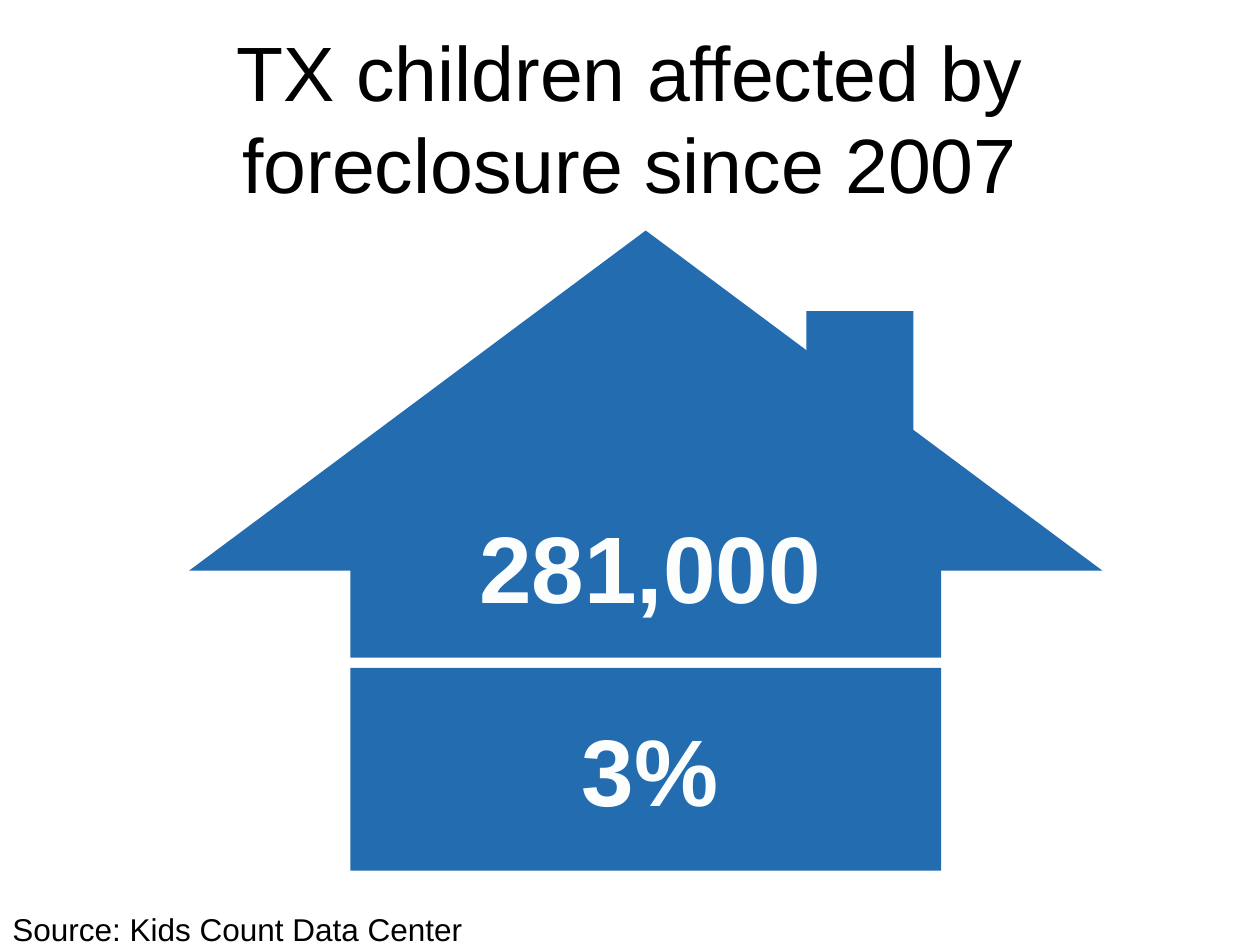
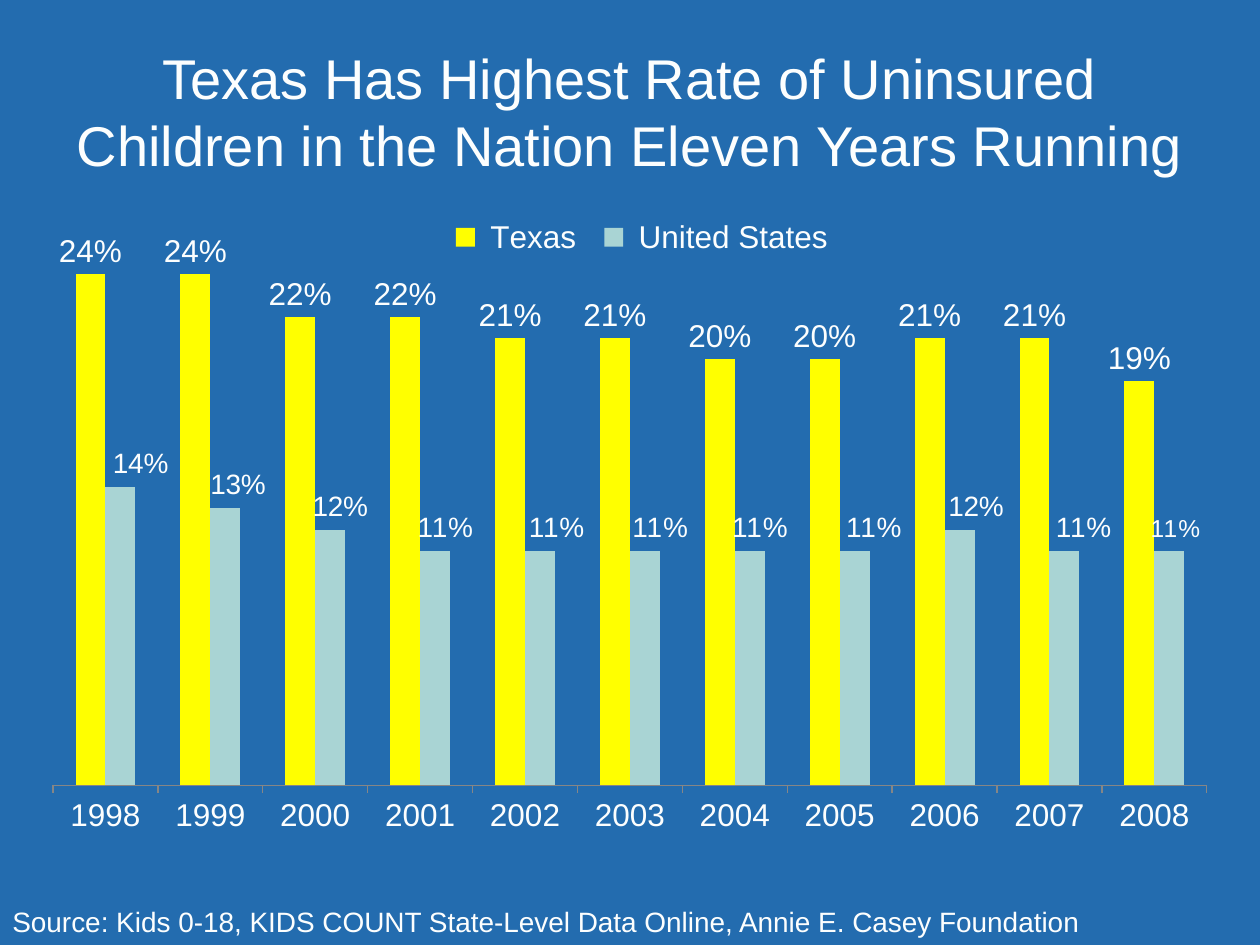
from lxml.etree import SubElement
from pptx import Presentation
from pptx.chart.data import CategoryChartData as ChartData
from pptx.dml.color import RGBColor
from pptx.enum.chart import XL_CHART_TYPE as Kind, XL_LABEL_POSITION as Spot
from pptx.enum.chart import XL_LEGEND_POSITION as Side, XL_TICK_MARK as Tick
from pptx.enum.shapes import MSO_SHAPE as Form
from pptx.enum.text import MSO_ANCHOR as Anchor, MSO_AUTO_SIZE as Fit, PP_ALIGN as Align
from pptx.oxml.ns import qn
from pptx.util import Inches, Pt

FACE = "Arial"
BLUE, WHITE, BLACK = "236CAF", "FCFEFE", "000000"
YELLOW, TEAL, GREY = "FFFF00", "A9D4D4", "868686"

YEARS = [str(year) for year in range(1998, 2009)]
TEXAS = [0.24, 0.24, 0.22, 0.22, 0.21, 0.21, 0.20, 0.20, 0.21, 0.21, 0.19]
NATION = [0.14, 0.13, 0.12, 0.11, 0.11, 0.11, 0.11, 0.11, 0.12, 0.11, 0.11]
# Sideways shift of each national label, in inches
SHIFTS = [0.16, 0.1, 0.08, 0.08, 0.13, 0.12, 0.08, 0.15, 0.13, 0.15, 0.05]


def color(code):
    return RGBColor.from_string(code)


def paint(shape, code):
    shape.fill.solid()
    shape.fill.fore_color.rgb = color(code)


def style(font, size, code, bold=False):
    font.name, font.size, font.bold = FACE, Pt(size), bold
    font.color.rgb = color(code)


def write(shape, text, size, code, align=Align.LEFT, bold=False):
    frame = shape.text_frame
    frame.text = text
    frame.word_wrap = True
    frame.auto_size = Fit.NONE
    para = frame.paragraphs[0]
    para.alignment = align
    style(para.runs[0].font, size, code, bold)


def start(deck, back, title, top, size, ink):
    """Add a slide with its background and title."""
    slide = deck.slides.add_slide(deck.slide_layouts[5])
    paint(slide.background, back)
    head = slide.shapes.title
    head.left, head.top = Inches(0.5), Inches(top)
    head.width, head.height = Inches(9), Inches(1.25)
    write(head, title, size, ink, Align.CENTER)
    head.text_frame.vertical_anchor = Anchor.MIDDLE
    return slide


def add_source(slide, text, top, size, ink):
    box = slide.shapes.add_textbox(0, Inches(top), Inches(10), Inches(0.4))
    write(box, text, size, ink)


def add_house(slide, left, top, upper, lower):
    """Draw a house with one figure on each floor."""
    group = slide.shapes.add_group_shape()

    def block(x, y, width, height, form=Form.RECTANGLE):
        part = group.shapes.add_shape(form, Inches(left + x), Inches(top + y),
                                      Inches(width), Inches(height))
        part.shadow.inherit = False
        paint(part, BLUE)
        part.line.fill.background()
        return part

    block(0, 0, 7.25, 2.7, Form.ISOSCELES_TRIANGLE)
    for y in (3.47, 1.78):
        block(1.28, y, 4.69, 1.61)
    for text, y in ((upper, 2.16), (lower, 3.77)):
        label = block(2.03, y, 3.26, 0.96)
        write(label, text, 54, WHITE, Align.CENTER, bold=True)
        label.text_frame.vertical_anchor = Anchor.TOP
    block(4.9, 0.64, 0.85, 1.03)


def add_layout(parent, spot, **values):
    """Place a chart part by hand; values are fractions of the chart."""
    for old in parent.findall(qn("c:layout")):
        parent.remove(old)
    layout = SubElement(parent, qn("c:layout"))
    manual = SubElement(layout, qn("c:manualLayout"))
    for name, value in values.items():
        SubElement(manual, qn("c:" + name)).set("val", str(value))
    parent.insert(spot, layout)


def add_labels(series, size):
    labels = series.data_labels
    labels.show_value = True
    labels.number_format, labels.number_format_is_linked = "0%", False
    labels.position = Spot.OUTSIDE_END
    style(labels.font, size, WHITE)


def shift_labels(series, width):
    last = len(SHIFTS) - 1
    for i in range(len(SHIFTS)):
        label = series.points[i].data_label
        style(label.font, 14 if i == last else 16, WHITE)
        label.position = Spot.OUTSIDE_END
    for shift, mark in zip(SHIFTS, series._element.iter(qn("c:dLbl"))):
        add_layout(mark, 1, x=round(shift / width, 4), y=-0.005)


def add_rates(slide, left, top, width, height):
    data = ChartData(number_format="0%")
    data.categories = YEARS
    data.add_series(" Texas", TEXAS)
    data.add_series(" United States", NATION)
    chart = slide.shapes.add_chart(
        Kind.COLUMN_CLUSTERED, Inches(left), Inches(top),
        Inches(width), Inches(height), data).chart
    chart.has_title = False
    style(chart.font, 18, WHITE)

    chart.has_legend = True
    legend = chart.legend
    legend.position = Side.RIGHT
    legend.include_in_layout = False
    style(legend.font, 18, WHITE)
    add_layout(legend._element, 1, xMode="edge", yMode="edge",
               x=0.34, y=0.05, w=0.34, h=0.07)

    area = chart._chartSpace.chart.plotArea
    add_layout(area, 0, layoutTarget="inner", xMode="edge", yMode="edge",
               x=0.018, y=0.108, w=0.964, h=0.775)

    scale = chart.value_axis
    scale.minimum_scale, scale.maximum_scale, scale.major_unit = 0, 0.25, 0.05
    scale.has_major_gridlines = False
    scale.visible = False
    years = chart.category_axis
    years.major_tick_mark = Tick.OUTSIDE
    years.format.line.color.rgb = color(GREY)
    style(years.tick_labels.font, 18, WHITE)

    plot = chart.plots[0]
    plot.gap_width, plot.overlap = 150, 0
    plot.vary_by_categories = False
    for series, code, size in zip(plot.series, (YELLOW, TEAL), (18, 16)):
        paint(series.format, code)
        add_labels(series, size)
    shift_labels(plot.series[1], width)


def main():
    deck = Presentation()
    deck.slide_width, deck.slide_height = Inches(10), Inches(7.5)

    slide = start(deck, "FFFFFF", "TX children affected by foreclosure since 2007",
                  0.3, 44, BLACK)
    add_source(slide, "Source: Kids Count Data Center", 7.17, 18, BLACK)
    add_house(slide, 1.5, 1.83, "281,000", "3%")

    slide = start(deck, BLUE, "Texas Has Highest Rate of Uninsured Children "
                  "in the Nation Eleven Years Running", 0.25, 32, WHITE)
    add_rates(slide, 0.25, 1.42, 9.5, 5.45)
    add_source(slide, "Source: Kids 0-18, KIDS COUNT State-Level Data Online, "
               "Annie E. Casey Foundation", 7.13, 16, WHITE)
    deck.save("out.pptx")


if __name__ == "__main__":
    main()
